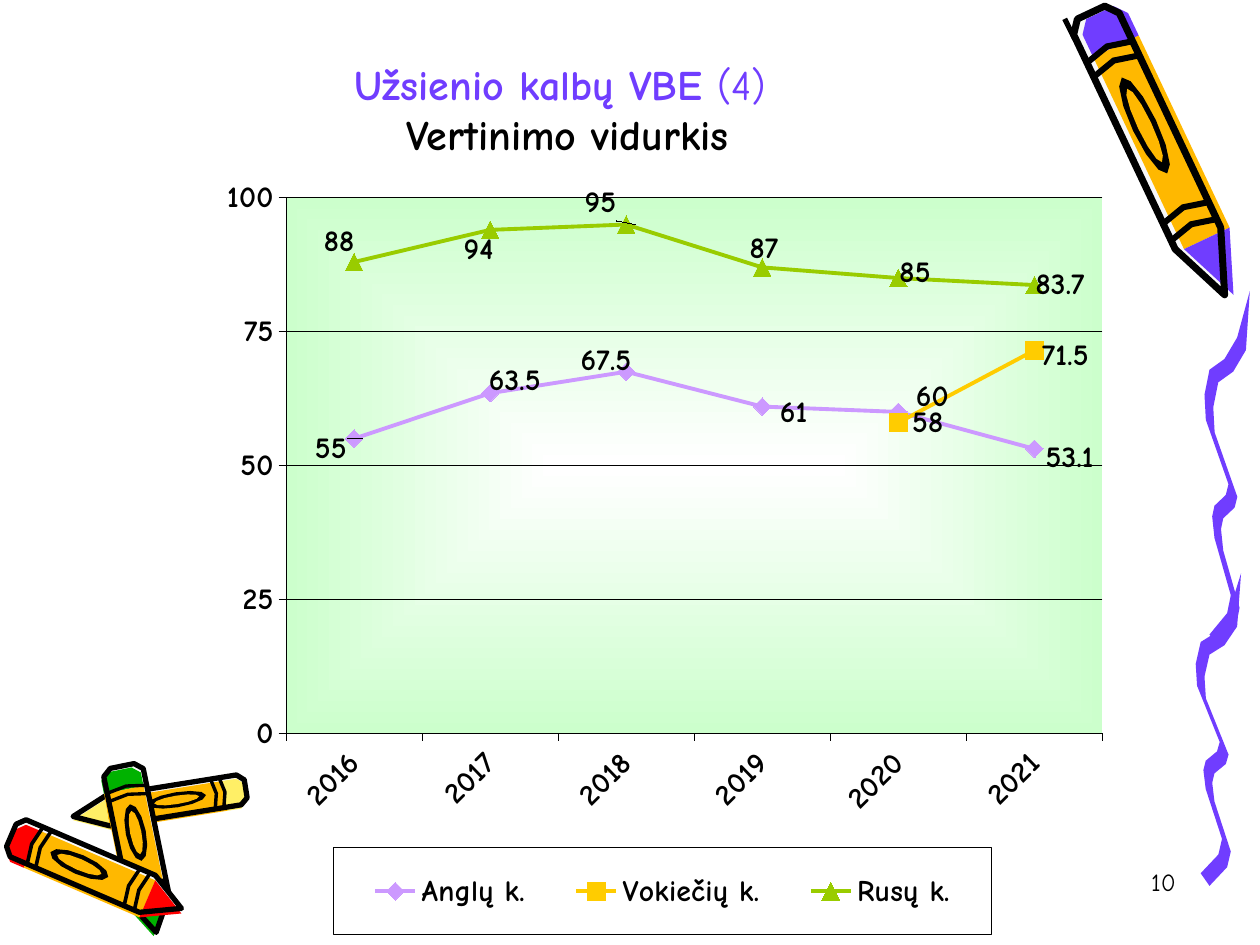
from math import cos, hypot, pi, sin
from lxml import etree
from pptx import Presentation
from pptx.chart.data import CategoryChartData
from pptx.dml.color import RGBColor
from pptx.enum.chart import (XL_CHART_TYPE, XL_LABEL_POSITION, XL_LEGEND_POSITION,
                             XL_MARKER_STYLE, XL_TICK_MARK)
from pptx.enum.shapes import MSO_CONNECTOR
from pptx.enum.text import MSO_ANCHOR, PP_ALIGN
from pptx.oxml import parse_xml
from pptx.oxml.ns import qn
from pptx.util import Inches, Pt

FONT = "Comic Neue"
BLACK, WHITE, VIOLET, ORANGE = "000000", "F8F8F8", "703DFF", "FFB800"
RED, GREEN, YELLOW = "FF0000", "00B200", "FFEF66"
NAMESPACES = ('xmlns:a="http://schemas.openxmlformats.org/drawingml/2006/main" '
              'xmlns:c="http://schemas.openxmlformats.org/drawingml/2006/chart"')

# Crayons, back to front: tail, tip, half width, tint, shift of the tint, outline in points
CRAYONS = [
    ((8.66, 0.1), (9.72, 2.34), 0.2, VIOLET, (0.07, 0), 4),
    ((1.95, 6.26), (0.58, 6.48), 0.12, YELLOW, (0, 0.03), 3),
    ((0.97, 6.08), (1.24, 7.4), 0.16, GREEN, (-0.02, 0.03), 3),
    ((0.09, 6.63), (1.44, 7.21), 0.16, RED, (0, 0.04), 3),
]
# One crayon: first number runs from tail (0) to tip (1), second across (-1 to 1)
SHOULDER = 0.8
OUTLINE = [(0.04, -1), (0, -0.6), (0, 0.6), (0.04, 1), (SHOULDER, 1), (1, 0), (SHOULDER, -1)]
CAP = [(0.12, -1), (0.04, -1), (0, -0.6), (0, 0.6), (0.04, 1), (0.12, 1)]
WRAPPER = [(0.12, -1), (0.12, 1), (SHOULDER, 1), (SHOULDER, -1)]
POINT = [(SHOULDER, -1), (SHOULDER, 1), (1, 0)]
BANDS = [0.13, 0.18, 0.7, 0.76]
BAND_DEPTH, BAND_ARCH = 0.02, 0.02
OVAL_CENTRE, OVAL_RINGS = 0.4, [(0.17, 0.5, BLACK), (0.13, 0.28, ORANGE)]
OVAL_CORNERS = 12

# One wave of the squiggle inside a unit box, and the boxes it fills
WAVE = [(1, 0), (0.72, 0.13), (0.44, 0.19), (0.11, 0.22), (0, 0.29), (0.03, 0.36), (0.53, 0.54),
        (0.47, 0.57), (0.22, 0.6), (0.17, 0.63), (0.22, 0.69), (0.58, 0.85), (0.5, 0.9), (0.11, 0.96)]
WAVE_BOXES = [(9.49, 4.55, 0.36, 2.48), (9.56, 2.31, 0.36, 2.84)]
NIB = (0.07, 0.1)

# Title lines: text, colour, bold
TITLE = [[("Užsienio kalbų VBE ", VIOLET, True), ("(4) ", VIOLET, False)],
         [("Vertinimo vidurkis", BLACK, True)]]

YEARS = ["2016", "2017", "2018", "2019", "2020", "2021"]
# Name, colour, marker, values, label shifts in inches from the right of each marker
SERIES = [
    ("Anglų k.", "CC99FF", XL_MARKER_STYLE.DIAMOND, [55, 63.5, 67.5, 61, 60, 53.1],
     [(-0.42, 0.08), (-0.12, -0.1), (-0.47, -0.09), (0.03, 0.05), (0.03, -0.12), (-0.02, 0.07)]),
    ("Vokiečių k.", "FFCC00", XL_MARKER_STYLE.SQUARE, [None, None, None, None, 58, 71.5],
     [None, None, None, None, (0, 0), (-0.05, 0.04)]),
    ("Rusų k.", "99CC00", XL_MARKER_STYLE.TRIANGLE, [88, 94, 95, 87, 85, 83.7],
     [(-0.35, -0.16), (-0.32, 0.16), (-0.44, -0.17), (-0.21, -0.15), (-0.1, -0.04), (-0.1, 0)]),
]
CHART_BOX = (0.98, 0.76, 8.55, 8)
PLOT_BOX = (1.29, 0.81, 6.48, 4.25)      # inches inside the chart
LEGEND_BOX = (1.67, 5.97, 5.22, 0.69)


def color(value):
    return RGBColor.from_string(value)


def style_font(font, size, value=BLACK, bold=True):
    font.name, font.size, font.bold = FONT, Pt(size), bold
    font.color.rgb = color(value)


def style_line(line, value=BLACK, width=0.55):
    line.color.rgb = color(value)
    line.width = Pt(width)


def draw_polygon(page, points, fill=None, outline=0):
    corners = [(Inches(x), Inches(y)) for x, y in points]
    builder = page.shapes.build_freeform(*corners[0])
    builder.add_line_segments(corners[1:], close=True)
    shape = builder.convert_to_shape()
    shape.shadow.inherit = False
    if fill:
        shape.fill.solid()
        shape.fill.fore_color.rgb = color(fill)
    else:
        shape.fill.background()
    if outline:
        style_line(shape.line, BLACK, outline)
    else:
        shape.line.fill.background()


def draw_crayon(page, tail, tip, half, tint, shift, outline):
    along = (tip[0] - tail[0], tip[1] - tail[1])
    length = hypot(*along)
    across = (along[1] / length * half, -along[0] / length * half)

    def place(points, offset=(0, 0)):
        return [tuple(tail[i] + t * along[i] + s * across[i] + offset[i] for i in (0, 1))
                for t, s in points]

    draw_polygon(page, place(OUTLINE), WHITE)
    for part, fill in ((CAP, tint), (WRAPPER, ORANGE), (POINT, tint)):
        draw_polygon(page, place(part, shift), fill)
    for start in BANDS:
        edge = [(start, -1), (start - BAND_ARCH, 0), (start, 1)]
        far_edge = [(t + BAND_DEPTH, s) for t, s in reversed(edge)]
        draw_polygon(page, place(edge + far_edge), BLACK)
    for radius, reach, fill in OVAL_RINGS:
        angles = [2 * pi * step / OVAL_CORNERS for step in range(OVAL_CORNERS)]
        oval = [(OVAL_CENTRE + radius * cos(a), reach * sin(a)) for a in angles]
        draw_polygon(page, place(oval), fill)
    draw_polygon(page, place(OUTLINE), outline=outline)


def draw_wave(page, left, top, width, height):
    """A pen stroke: the wave, then the same wave moved by the nib, backwards."""
    edge = [(left + x * width, top + y * height) for x, y in WAVE]
    far_edge = [(x + NIB[0], y + NIB[1]) for x, y in reversed(edge[1:])]
    draw_polygon(page, edge + far_edge, VIOLET)


def add_text_box(page, left, top, width, height, align):
    box = page.shapes.add_textbox(Inches(left), Inches(top), Inches(width), Inches(height))
    box.text_frame.word_wrap = True
    para = box.text_frame.paragraphs[0]
    para.alignment = align
    return box, para


def manual_layout(box, inner=False, edge=True):
    """Chart layout element for left, top and optional size in inches."""
    parts = ['<c:layoutTarget val="inner"/>'] if inner else []
    if edge:
        parts += ['<c:xMode val="edge"/>', '<c:yMode val="edge"/>']
    for tag, size, whole in zip("xywh", box, CHART_BOX[2:] * 2):
        parts.append(f'<c:{tag} val="{size / whole:.4f}"/>')
    return parse_xml(f'<c:layout {NAMESPACES}><c:manualLayout>{"".join(parts)}'
                     '</c:manualLayout></c:layout>')


def set_layout(parent, layout, after=None):
    for old in parent.findall(qn("c:layout")):
        parent.remove(old)
    if after:
        parent.find(qn(after)).addnext(layout)
    else:
        parent.insert(0, layout)


def style_axes(chart):
    for axis in (chart.category_axis, chart.value_axis):
        axis.major_tick_mark = XL_TICK_MARK.OUTSIDE
        style_line(axis.format.line)
        style_font(axis.tick_labels.font, 17)
    chart.category_axis._element.find(qn("c:txPr")).find(qn("a:bodyPr")).set("rot", "-2700000")
    scale = chart.value_axis
    scale.minimum_scale, scale.maximum_scale, scale.major_unit = 0, 100, 25
    scale.has_major_gridlines = True
    style_line(scale.major_gridlines.format.line)


def style_series(series, tint, marker, shifts):
    series.smooth = False
    style_line(series.format.line, tint, 2.2)
    series.marker.style, series.marker.size = marker, 10
    series.marker.format.fill.solid()
    series.marker.format.fill.fore_color.rgb = color(tint)
    style_line(series.marker.format.line, tint)
    labels = series.data_labels
    labels.show_value = True
    style_font(labels.font, 17)
    for index, shift in enumerate(shifts):
        if shift:
            label = series.points[index].data_label
            style_font(label.font, 17)
            label.position = XL_LABEL_POSITION.RIGHT
            entry = labels._element.findall(qn("c:dLbl"))[-1]
            set_layout(entry, manual_layout(shift, edge=False), after="c:idx")
    # No leader lines from moved labels
    for old in labels._element.findall(qn("c:showLeaderLines")):
        labels._element.remove(old)
    labels._element.append(parse_xml(
        f'<c:extLst {NAMESPACES}><c:ext uri="{{CE6537A1-D6FC-4f65-9D91-7224C49458BB}}" '
        'xmlns:c15="http://schemas.microsoft.com/office/drawing/2012/chart">'
        '<c15:showLeaderLines val="0"/></c:ext></c:extLst>'))


def add_line_chart(page):
    data = CategoryChartData()
    data.categories = YEARS
    for name, _, _, values, _ in SERIES:
        data.add_series(name, values)
    chart = page.shapes.add_chart(XL_CHART_TYPE.LINE_MARKERS, *map(Inches, CHART_BOX), data).chart
    chart.has_title = False
    style_font(chart.font, 17)
    chart.plots[0].vary_by_categories = False
    style_axes(chart)
    for series, (_, tint, marker, _, shifts) in zip(chart.plots[0].series, SERIES):
        style_series(series, tint, marker, shifts)

    # Legend with a frame
    chart.has_legend = True
    legend = chart.legend
    legend.position = XL_LEGEND_POSITION.BOTTOM
    legend.include_in_layout = False
    style_font(legend.font, 17)
    set_layout(legend._element, manual_layout(LEGEND_BOX), after="c:legendPos")
    legend._element.find(qn("c:txPr")).addprevious(parse_xml(
        f'<c:spPr {NAMESPACES}><a:noFill/><a:ln w="6985"><a:solidFill>'
        f'<a:srgbClr val="{BLACK}"/></a:solidFill></a:ln></c:spPr>'))

    # Plot area with a gradient spreading from its centre
    area = chart._chartSpace.chart.plotArea
    set_layout(area, manual_layout(PLOT_BOX, inner=True))
    etree.SubElement(area, qn("c:spPr")).append(parse_xml(
        f'<a:gradFill {NAMESPACES}><a:gsLst><a:gs pos="0"><a:srgbClr val="FFFFFF"/></a:gs>'
        '<a:gs pos="100000"><a:srgbClr val="CCFFCC"/></a:gs></a:gsLst><a:path path="rect">'
        '<a:fillToRect l="50000" t="50000" r="50000" b="50000"/></a:path></a:gradFill>'))


deck = Presentation()
deck.slide_width, deck.slide_height = Inches(10), Inches(7.5)
page = deck.slides.add_slide(deck.slide_layouts[6])

# Crayons and squiggle, with the short stroke at the big crayon's tail
for crayon in CRAYONS:
    draw_crayon(page, *crayon)
for box in WAVE_BOXES:
    draw_wave(page, *box)
stroke = page.shapes.add_connector(MSO_CONNECTOR.STRAIGHT, *map(Inches, (8.45, 0.15, 8.53, 0.31)))
style_line(stroke.line, BLACK, 3)
etree.SubElement(stroke._element.spPr, qn("a:effectLst"))

# Title
title, para = add_text_box(page, 0.75, 0.99, 7.51, 0.32, PP_ALIGN.CENTER)
title.text_frame.vertical_anchor = MSO_ANCHOR.BOTTOM
for number, spans in enumerate(TITLE):
    if number:
        para.add_line_break()
    for text, tint, bold in spans:
        span = para.add_run()
        span.text = text
        style_font(span.font, 24, tint, bold)

add_line_chart(page)

# Page number
_, para = add_text_box(page, 7.35, 6.83, 2.08, 0.5, PP_ALIGN.RIGHT)
para.text = "10"
style_font(para.font, 14, bold=False)

deck.save("out.pptx")
